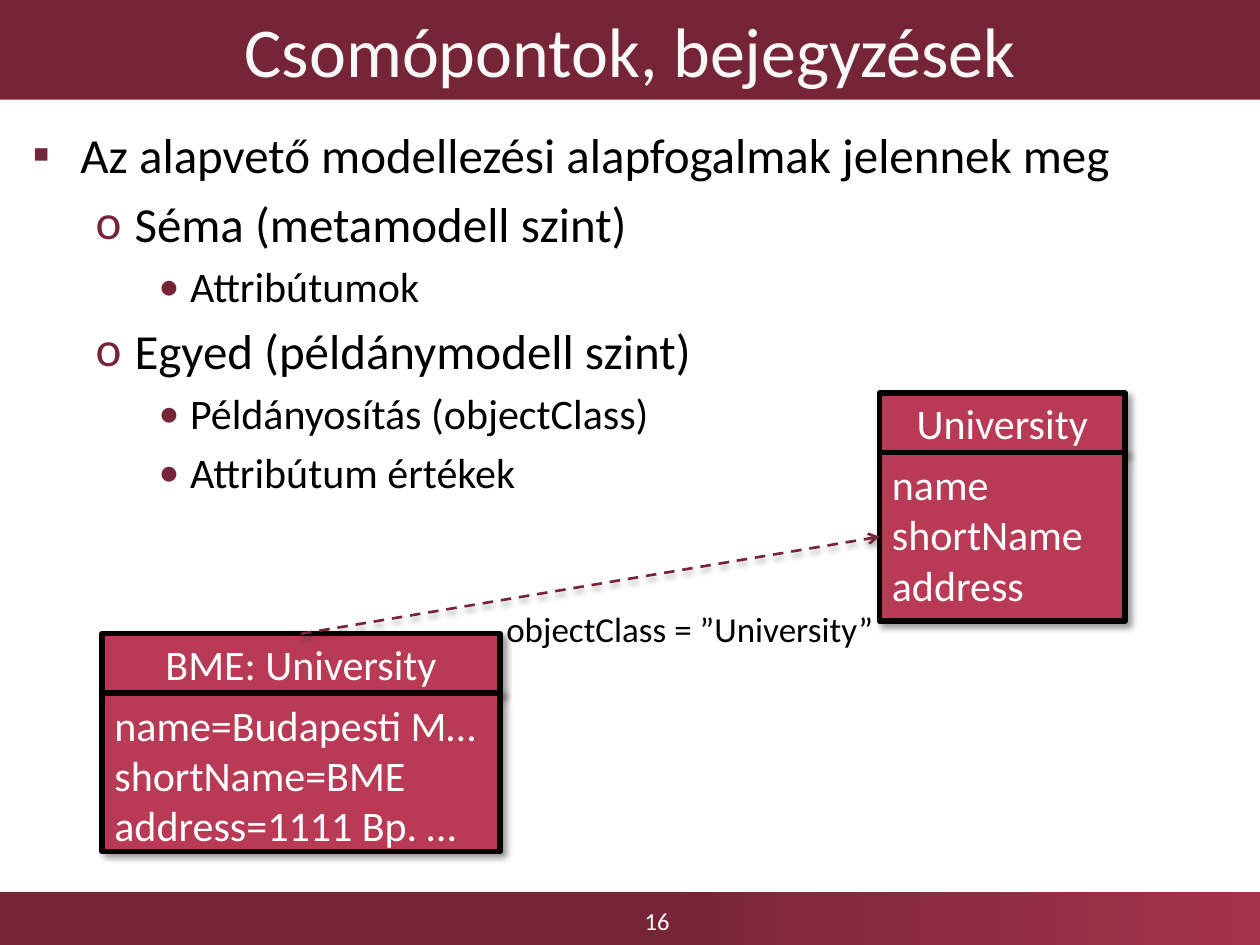
import pptx
import pptx.util
import pptx.dml.color
import pptx.enum.dml
import pptx.enum.shapes
import pptx.enum.text
import pptx.oxml
import pptx.oxml.ns
from dataclasses import dataclass

PX = 9144
ALIGN = pptx.enum.text.PP_ALIGN
ANCHOR = pptx.enum.text.MSO_ANCHOR
RECT = pptx.enum.shapes.MSO_SHAPE.RECTANGLE
NS = pptx.oxml.ns.nsdecls("a")


@dataclass(frozen=True)
class Theme:
    font: str = "Calibri"
    wine: str = "762536"
    rose: str = "A3334B"
    box: str = "B83A55"
    white: str = "FFFFFF"
    title: str = "F8F8F8"
    black: str = "000000"
    title_size: int = 40
    body_size: int = 28
    small_size: int = 24
    label_size: int = 20
    number_size: int = 14


T = Theme()
LEVELS = [
    dict(bullet="▪", indent=38, hang=38, size=T.body_size),
    dict(bullet="o", indent=81, hang=31, size=T.body_size),
    dict(bullet="•", indent=125, hang=25, size=T.small_size),
]


def rgb(value):
    return pptx.dml.color.RGBColor.from_string(value)


def px(*values):
    return [v * PX for v in values]


def write(p, text, size, color, align=ALIGN.LEFT):
    p.alignment = align
    r = p.add_run()
    r.text = text
    r.font.name = T.font
    r.font.size = pptx.util.Pt(size)
    r.font.color.rgb = rgb(color)


def fill_text(sp, lines, anchor=ANCHOR.TOP, wrap=True, **fmt):
    tf = sp.text_frame
    tf.word_wrap = wrap
    tf.vertical_anchor = anchor
    for i, line in enumerate(lines):
        write(tf.add_paragraph() if i else tf.paragraphs[0], line, **fmt)


def set_shadow(sp, blur, dist, angle, alpha):
    sp._element.spPr.append(pptx.oxml.parse_xml(
        f'<a:effectLst {NS}><a:outerShdw blurRad="{int(blur * 12700)}" '
        f'dist="{int(dist * 12700)}" dir="{angle * 60000}" algn="tl" rotWithShape="0">'
        f'<a:srgbClr val="{T.black}"><a:alpha val="{alpha * 1000}"/></a:srgbClr>'
        '</a:outerShdw></a:effectLst>'))


def add_rect(s, x, y, w, h, color):
    sp = s.shapes.add_shape(RECT, *px(x, y, w, h))
    sp.fill.solid()
    sp.fill.fore_color.rgb = rgb(color)
    sp.line.fill.background()
    return sp


def add_footer(s, x, y, w, h, number):
    sp = add_rect(s, x, y, w, h, T.wine)
    sp.shadow.inherit = False
    sp.fill.gradient()
    sp.fill.gradient_angle = 0
    for stop, position, color in zip(sp.fill.gradient_stops, (0.5, 1), (T.wine, T.rose)):
        stop.position = position
        stop.color.rgb = rgb(color)
    tb = s.shapes.add_textbox(*px(x + 359, y + 3, 325, 39))
    fill_text(tb, [number], anchor=ANCHOR.MIDDLE, size=T.number_size,
              color=T.white, align=ALIGN.CENTER)


def add_title(s, x, y, w, h, text):
    sp = add_rect(s, x, y, w, h, T.wine)
    sp.shadow.inherit = False
    fill_text(sp, [text], anchor=ANCHOR.MIDDLE, size=T.title_size,
              color=T.title, align=ALIGN.CENTER)


def add_outline(s, x, y, w, h, items):
    tf = s.shapes.add_textbox(*px(x, y, w, h)).text_frame
    tf.word_wrap = True
    for i, (level, text) in enumerate(items):
        style = LEVELS[level]
        p = tf.add_paragraph() if i else tf.paragraphs[0]
        p.level = level
        pPr = p._p.get_or_add_pPr()
        pPr.set("marL", str(style["indent"] * PX))
        pPr.set("indent", str(-style["hang"] * PX))
        for xml in (f'<a:buClr {NS}><a:srgbClr val="{T.wine}"/></a:buClr>',
                    f'<a:buFont {NS} typeface="{T.font}"/>',
                    f'<a:buChar {NS} char="{style["bullet"]}"/>'):
            pPr.append(pptx.oxml.parse_xml(xml))
        if i:
            p.space_before = pptx.util.Pt(round(0.2 * style["size"], 1))
        write(p, text, style["size"], T.black)


def add_class_box(s, x, y, w, h, name, attributes):
    head = 47
    parts = []
    for top, height in ((y, head), (y + head, h - head)):
        sp = add_rect(s, x, top, w, height, T.box)
        sp.line.color.rgb = rgb(T.black)
        sp.line.width = pptx.util.Pt(3)
        set_shadow(sp, 4, 3, 45, 40)
        parts.append(sp)
    fmt = dict(size=T.small_size, color=T.white)
    fill_text(parts[0], [name], anchor=ANCHOR.MIDDLE, align=ALIGN.CENTER, **fmt)
    fill_text(parts[1], attributes, **fmt)
    return parts


def add_link(s, source, target):
    cx = s.shapes.add_connector(pptx.enum.shapes.MSO_CONNECTOR.STRAIGHT, 0, 0, 0, 0)
    cx.begin_connect(source, 0)
    cx.end_connect(target, 1)
    cx.line.color.rgb = rgb(T.wine)
    cx.line.width = pptx.util.Pt(1.5)
    cx.line.dash_style = pptx.enum.dml.MSO_LINE.DASH
    cx.line._get_or_add_ln().append(
        pptx.oxml.parse_xml(f'<a:tailEnd {NS} type="arrow"/>'))
    set_shadow(cx, 3.1, 1.8, 90, 35)


def add_label(s, x, y, w, h, text):
    tb = s.shapes.add_textbox(*px(x, y, w, h))
    fill_text(tb, [text], wrap=False, size=T.label_size, color=T.black)
    tb.text_frame.auto_size = pptx.enum.text.MSO_AUTO_SIZE.SHAPE_TO_FIT_TEXT


def main():
    prs = pptx.Presentation()
    prs.slide_width, prs.slide_height = px(1000, 750)
    s = prs.slides.add_slide(prs.slide_layouts[6])
    add_footer(s, 0, 708, 1000, 42, "16")
    add_title(s, 0, 0, 1000, 79, "Csomópontok, bejegyzések")
    add_outline(s, 16, 94, 969, 605, [
        (0, "Az alapvető modellezési alapfogalmak jelennek meg"),
        (1, "Séma (metamodell szint)"),
        (2, "Attribútumok"),
        (1, "Egyed (példánymodell szint)"),
        (2, "Példányosítás (objectClass)"),
        (2, "Attribútum értékek"),
    ])
    schema = add_class_box(s, 698, 312, 195, 181, "University",
                           ["name", "shortName", "address"])
    entry = add_class_box(s, 81, 503, 316, 173, "BME: University",
                          ["name=Budapesti M…", "shortName=BME", "address=1111 Bp. …"])
    add_link(s, entry[0], schema[1])
    add_label(s, 392, 477, 314, 44, "objectClass = ”University”")
    prs.save("out.pptx")


if __name__ == "__main__":
    main()
